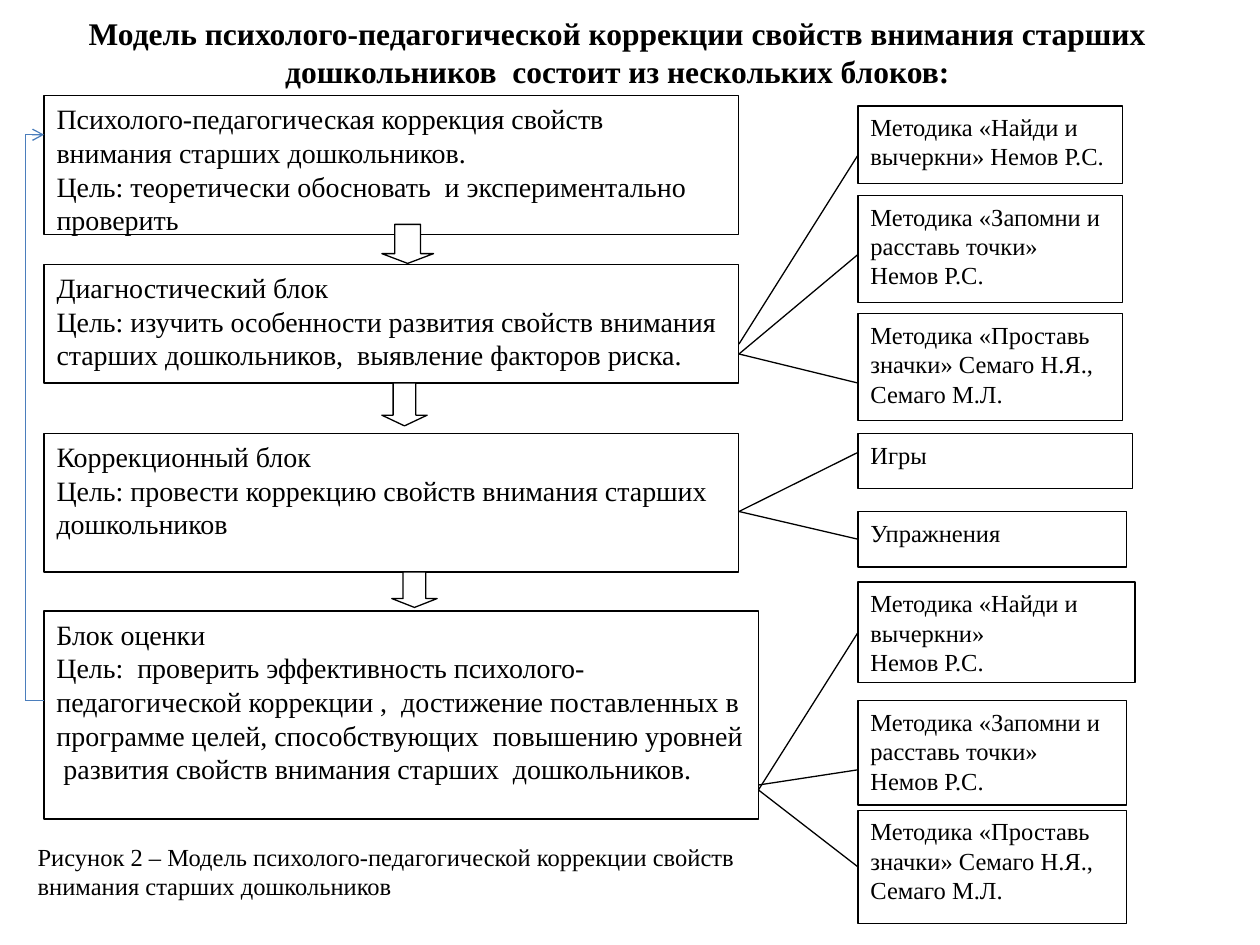
from dataclasses import dataclass
from typing import Optional

from lxml.etree import SubElement
from pptx import Presentation
from pptx.dml.color import RGBColor
from pptx.enum.shapes import MSO_CONNECTOR as Connector, MSO_SHAPE as Shape
from pptx.enum.text import MSO_ANCHOR as Anchor, PP_ALIGN as Align
from pptx.oxml.ns import qn
from pptx.util import Pt

FONT = "Times New Roman"
BLACK, WHITE, BLUE = "000000", "FFFFFF", "4B7EBC"
LINE_WIDTH = 0.75
BLOCK_LEFT, METHOD_LEFT, FEEDBACK_LEFT = 25.2, 490.3, 14.4
LEFT_SIDE = 1


@dataclass
class Block:
    top: float
    width: float
    height: float
    text: str


@dataclass
class Method(Block):
    source: tuple[float, float]  # where its link leaves the block
    link_y: Optional[float] = None  # None: middle of the left side


@dataclass
class Arrow:
    left: float
    top: float
    width: float
    height: float


# Content
BLOCKS = [
    Block(54.7, 396.7, 79.2,
          "Психолого-педагогическая коррекция свойств внимания старших дошкольников.\n"
          "Цель: теоретически обосновать  и экспериментально проверить"),
    Block(151.2, 396.7, 67.7,
          "Диагностический блок\n"
          "Цель: изучить особенности развития свойств внимания старших дошкольников,"
          "  выявление факторов риска."),
    Block(247.7, 396.7, 79.2,
          "Коррекционный блок\n"
          "Цель: провести коррекцию свойств внимания старших дошкольников"),
    Block(349.2, 408.2, 118.8,
          "Блок оценки\n"
          "Цель:  проверить эффективность психолого-педагогической коррекции ,"
          "  достижение поставленных в программе целей, способствующих  повышению уровней"
          "  развития свойств внимания старших  дошкольников."),
]
DIAGNOSTICS, CORRECTION, ASSESSMENT = (422.3, 202.3), (422.3, 292.3), (433.4, 451.4)
MARKS = "Методика «Проставь значки» Семаго Н.Я., Семаго М.Л."
METHODS = [
    Method(60.5, 151.2, 44.6, "Методика «Найди и вычеркни» Немов Р.С.", (422.3, 196.6), 88.6),
    Method(111.6, 151.2, 61.2, "Методика «Запомни и расставь точки» Немов Р.С.",
           DIAGNOSTICS, 145.4),
    Method(179.3, 151.2, 61.2, MARKS, DIAGNOSTICS, 218.9),
    Method(247.7, 157, 31.7, "Игры", CORRECTION, 258.5),
    Method(292.3, 153.4, 31.7, "Упражнения", CORRECTION),
    Method(332.6, 158.4, 57.6, "Методика «Найди и вычеркни»\nНемов Р.С.", ASSESSMENT),
    Method(400.3, 153.4, 59.8, "Методика «Запомни и расставь точки»\nНемов Р.С.",
           (433.4, 448.6), 439.9),
    Method(463, 153.4, 64.8, MARKS, ASSESSMENT),
]
ARROWS = [
    Arrow(218.2, 128.2, 29.5, 22.3),
    Arrow(218.2, 218.9, 25.9, 24.5),
    Arrow(223.9, 326.9, 25.9, 20.2),
]


def rgb(color: str) -> RGBColor:
    return RGBColor.from_string(color)


def write(shape, text: str, size: float, bold: bool = False,
          align=Align.LEFT, anchor=Anchor.TOP) -> None:
    frame = shape.text_frame
    frame.text = text
    frame.word_wrap = True
    frame.vertical_anchor = anchor
    for paragraph in frame.paragraphs:
        paragraph.alignment = align
        for run in paragraph.runs:
            run.font.name, run.font.size, run.font.bold = FONT, Pt(size), bold
            run.font.color.rgb = rgb(BLACK)


def add_outlined(slide, kind, left: float, top: float, width: float, height: float):
    shape = slide.shapes.add_shape(kind, Pt(left), Pt(top), Pt(width), Pt(height))
    shape.shadow.inherit = False
    shape.fill.solid()
    shape.fill.fore_color.rgb = rgb(WHITE)
    shape.line.color.rgb = rgb(BLACK)
    shape.line.width = Pt(LINE_WIDTH)
    return shape


def add_box(slide, block: Block, left: float, size: float):
    box = add_outlined(slide, Shape.RECTANGLE, left, block.top, block.width, block.height)
    write(box, block.text, size)
    return box


def add_line(slide, start: tuple[float, float], end: tuple[float, float],
             color: str = BLACK, arrow: bool = False):
    line = slide.shapes.add_connector(
        Connector.STRAIGHT, *(Pt(value) for value in (*start, *end)))
    line.line.color.rgb = rgb(color)
    line.line.width = Pt(LINE_WIDTH)
    if arrow:
        SubElement(line.line._get_or_add_ln(), qn("a:tailEnd"), type="arrow")
    SubElement(line._element.spPr, qn("a:effectLst"))
    return line


def add_method(slide, method: Method) -> None:
    box = add_box(slide, method, METHOD_LEFT, 14)
    middle = method.top + method.height / 2
    link_y = middle if method.link_y is None else method.link_y
    link = add_line(slide, method.source, (METHOD_LEFT, link_y))
    if method.link_y is None:
        link.end_connect(box, LEFT_SIDE)


def add_feedback(slide, top: float, bottom: float) -> None:
    add_line(slide, (FEEDBACK_LEFT, top), (FEEDBACK_LEFT, bottom), BLUE)
    add_line(slide, (FEEDBACK_LEFT, top), (BLOCK_LEFT, top), BLUE, arrow=True)
    add_line(slide, (FEEDBACK_LEFT, bottom), (BLOCK_LEFT, bottom), BLUE)


def main() -> None:
    deck = Presentation()
    deck.slide_width, deck.slide_height = Pt(720), Pt(540)
    slide = deck.slides.add_slide(deck.slide_layouts[5])

    # Heading
    heading = slide.shapes.title
    heading.left, heading.top, heading.width, heading.height = (
        Pt(0), Pt(4.3), Pt(705.6), Pt(72.7))
    write(heading, "Модель психолого-педагогической коррекции свойств внимания старших"
          " дошкольников  состоит из нескольких блоков:", 18, True, Align.CENTER)

    # Blocks and their methods
    for block in BLOCKS:
        add_box(slide, block, BLOCK_LEFT, 16)
    for method in METHODS:
        add_method(slide, method)

    # Arrows from block to block
    for arrow in ARROWS:
        down = add_outlined(slide, Shape.DOWN_ARROW,
                            arrow.left, arrow.top, arrow.width, arrow.height)
        down.adjustments[1] = 0.25

    # Feedback from the last block to the first
    add_feedback(slide, 77, 400.3)

    # Caption
    caption = slide.shapes.add_textbox(Pt(14.4), Pt(477.4), Pt(465.1), Pt(41))
    write(caption, "Рисунок 2 – Модель психолого-педагогической коррекции свойств"
          " внимания старших дошкольников", 14, anchor=Anchor.MIDDLE)

    deck.save("out.pptx")


if __name__ == "__main__":
    main()
